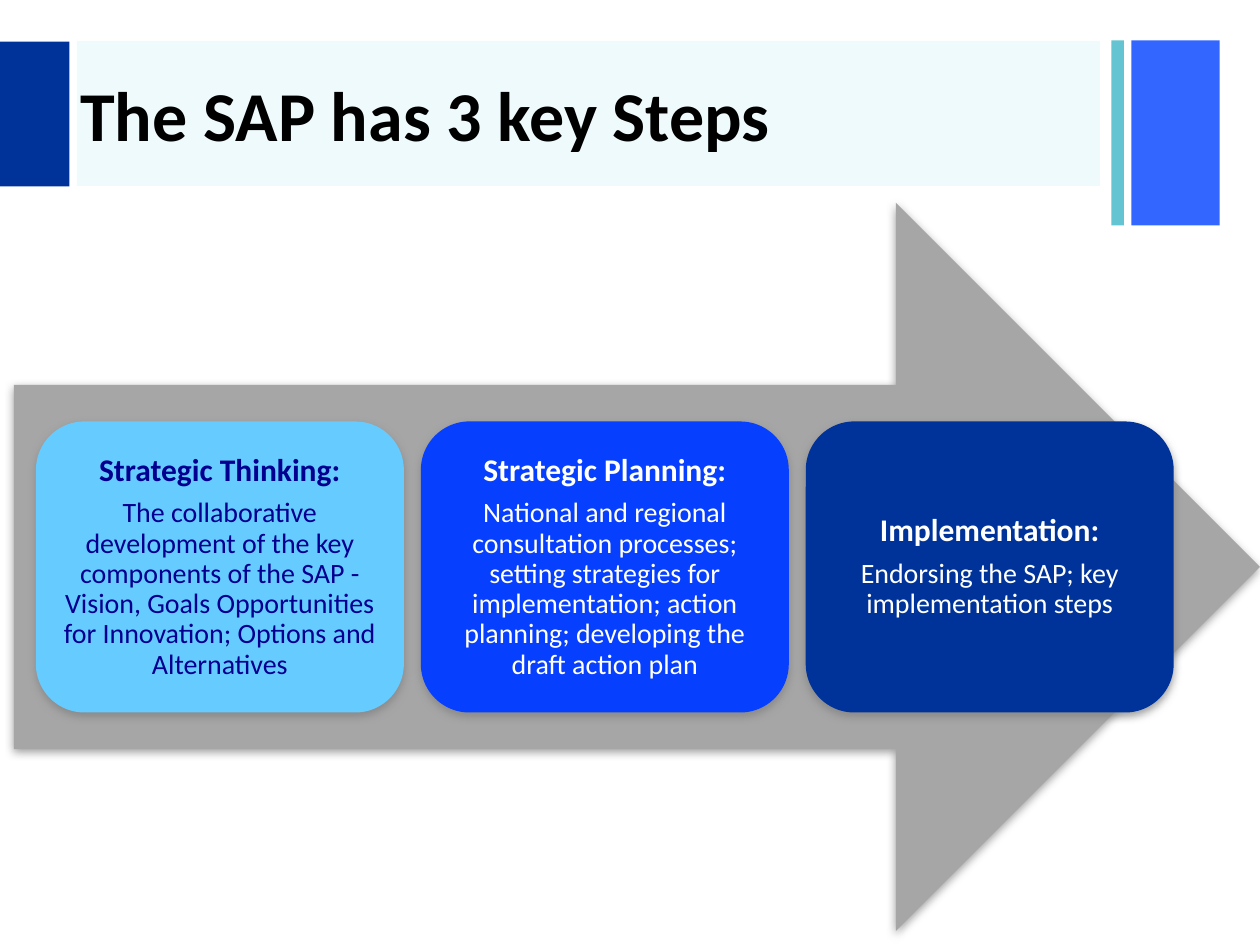
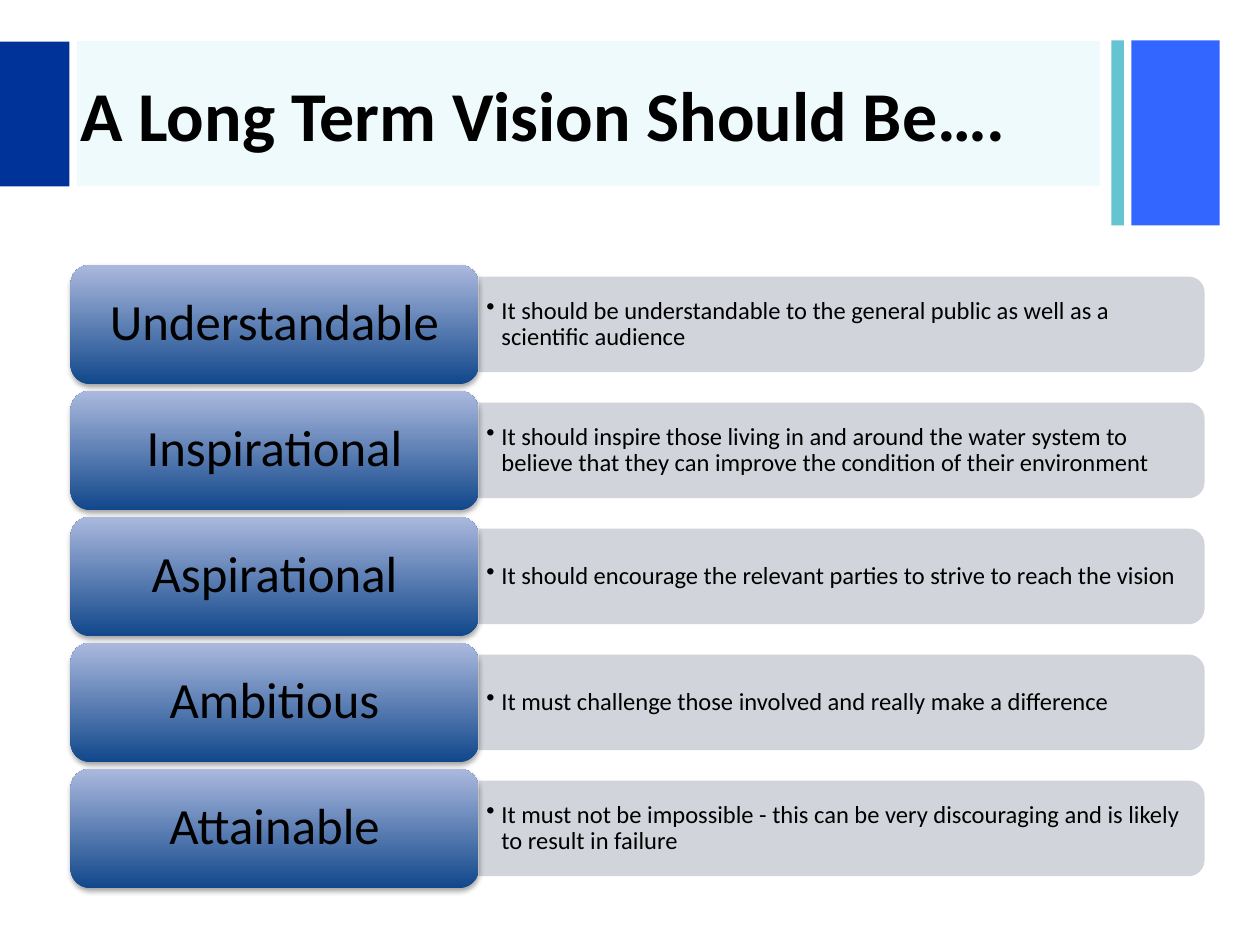
from dataclasses import dataclass
from typing import Optional

from lxml import etree
from pptx import Presentation
from pptx import util as u
from pptx.dml.color import RGBColor
from pptx.enum import shapes, text
from pptx.oxml.ns import qn
from pptx.shapes.autoshape import Shape
from pptx.slide import Slide
from pptx.text.text import TextFrame

WIDTH, HEIGHT = u.Inches(10), u.Inches(7.5)
COL, ROW = WIDTH / 100, HEIGHT / 75
FONT = "Calibri"
KIND = shapes.MSO_SHAPE
CENTER, LEFT = text.PP_ALIGN.CENTER, text.PP_ALIGN.LEFT

COLORS = {
    "black": "000000",
    "white": "FFFFFF",
    "ink": "000090",
    "navy": "003399",
    "royal": "3366FF",
    "teal": "65C4D2",
    "pale": "14C5D0",
    "arrow": "A6A6A6",
    "sky": "66CCFF",
    "vivid": "073FFF",
    "detail": "CDD0D7",
    "label_bottom": "11478B",
    "label_top": "ABB9DE",
    "shade": "808080",
}


@dataclass(frozen=True)
class Box:
    """A place on the grid of 100 columns and 75 rows."""
    col: float
    row: float
    cols: float
    rows: float

    def emu(self) -> tuple[int, ...]:
        return (round(self.col * COL), round(self.row * ROW),
                round(self.cols * COL), round(self.rows * ROW))


@dataclass(frozen=True)
class Band:
    box: Box
    color: str
    alpha: int = 100


@dataclass(frozen=True)
class Shadow:
    color: str
    alpha: int
    blur: float
    distance: float


@dataclass(frozen=True)
class Step:
    heading: str
    body: str
    fill: str
    ink: str


@dataclass(frozen=True)
class Quality:
    label: str
    detail: str


BANDS = [
    Band(Box(89.8, 3.2, 7, 14.7), "royal"),
    Band(Box(88.2, 3.2, 1, 14.7), "teal"),
    Band(Box(6.1, 3.25, 81.2, 11.5), "pale", 7),
    Band(Box(0, 3.3, 5.5, 11.5), "navy"),
]
TITLE = Box(5.4, 3.4, 82.7, 11.2)

ARROW = Box(1.1, 16.1, 98.9, 57.8)
STEP = Box(2.85, 33.45, 29.2, 23.1)
STEP_PITCH = 30.55
STEP_SHADOW = Shadow("shade", 75, 5, 2)
STEPS = [
    Step("Strategic Thinking:",
         "The collaborative development of the key components of the SAP - "
         "Vision, Goals Opportunities for Innovation; Options and Alternatives",
         "sky", "ink"),
    Step("Strategic Planning:",
         "National and regional consultation processes; setting strategies for "
         "implementation; action planning; developing the draft action plan",
         "vivid", "white"),
    Step("Implementation:", "Endorsing the SAP; key implementation steps",
         "navy", "white"),
]

LABEL = Box(5.6, 21, 32.4, 9.5)
DETAIL = Box(38, 21.95, 57.6, 7.6)
QUALITY_PITCH = 10
LABEL_SHADOW = Shadow("black", 35, 3.1, 1.8)
QUALITIES = [
    Quality("Understandable",
            "It should be understandable to the general public as well as a "
            "scientific audience"),
    Quality("Inspirational",
            "It should inspire those living in and around the water system to "
            "believe that they can improve the condition of their environment"),
    Quality("Aspirational",
            "It should encourage the relevant parties to strive to reach the vision"),
    Quality("Ambitious",
            "It must challenge those involved and really make a difference"),
    Quality("Attainable",
            "It must not be impossible - this can be very discouraging and is "
            "likely to result in failure"),
]


def rgb(name: str) -> RGBColor:
    return RGBColor.from_string(COLORS[name])


def set_alpha(element: etree._Element, percent: int) -> None:
    """Make every plain colour inside the element translucent."""
    for color in element.iter(qn("a:srgbClr")):
        etree.SubElement(color, qn("a:alpha"), val=str(percent * 1000))


def draw(slide: Slide, kind: shapes.MSO_SHAPE, box: Box, color: str,
         alpha: int = 100) -> Shape:
    shape = slide.shapes.add_shape(kind, *box.emu())
    shape.fill.solid()
    shape.fill.fore_color.rgb = rgb(color)
    shape.line.fill.background()
    shape.shadow.inherit = False
    if alpha < 100:
        set_alpha(shape.fill._xPr, alpha)
    return shape


def cast_shadow(shape: Shape, shadow: Shadow) -> None:
    effects = shape._element.spPr.find(qn("a:effectLst"))
    outer = etree.SubElement(
        effects, qn("a:outerShdw"), blurRad=str(u.Pt(shadow.blur)),
        dist=str(u.Pt(shadow.distance)), dir="5400000", rotWithShape="0")
    etree.SubElement(outer, qn("a:srgbClr"), val=COLORS[shadow.color])
    set_alpha(outer, shadow.alpha)


def write(frame: TextFrame, lines: list[str], sizes: list[int], color: str,
          align: text.PP_ALIGN = CENTER, bold_first: bool = False,
          spacing: float = 0.9, insets: tuple[float, float] = (0.1, 0.05)) -> None:
    """Fill a frame with one paragraph per line, centred vertically."""
    frame.word_wrap = True
    frame.vertical_anchor = text.MSO_ANCHOR.MIDDLE
    frame.margin_left = frame.margin_right = u.Inches(insets[0])
    frame.margin_top = frame.margin_bottom = u.Inches(insets[1])
    frame.text = "\n".join(lines)
    for index, (paragraph, size) in enumerate(zip(frame.paragraphs, sizes)):
        paragraph.alignment = align
        paragraph.line_spacing = spacing
        if index < len(lines) - 1:
            paragraph.space_after = u.Pt(0.35 * size)
        font = paragraph.runs[0].font
        font.name, font.size = FONT, u.Pt(size)
        font.bold = bold_first and index == 0
        font.color.rgb = rgb(color)


def add_bullet(frame: TextFrame) -> None:
    indent = u.Inches(0.12)
    for paragraph in frame.paragraphs:
        paragraph.level = 1
        properties = paragraph._p.get_or_add_pPr()
        properties.set("marL", str(indent))
        properties.set("indent", str(-indent))
        etree.SubElement(properties, qn("a:buChar"), char="•")


def titled_slide(deck: Presentation, title: str) -> Slide:
    slide = deck.slides.add_slide(deck.slide_layouts[6])
    for band in BANDS:
        draw(slide, KIND.RECTANGLE, band.box, band.color, band.alpha)
    heading = slide.shapes.add_textbox(*TITLE.emu())
    write(heading.text_frame, [title], [40], "black", LEFT,
          bold_first=True, spacing=1.0)
    return slide


def draw_step(slide: Slide, position: int, step: Step) -> None:
    box = Box(STEP.col + position * STEP_PITCH, STEP.row, STEP.cols, STEP.rows)
    card = draw(slide, KIND.ROUNDED_RECTANGLE, box, step.fill)
    cast_shadow(card, STEP_SHADOW)
    write(card.text_frame, [step.heading, step.body], [18, 16], step.ink,
          bold_first=True, insets=(0.07, 0.07))


def draw_detail(slide: Slide, box: Box, detail: str) -> None:
    """Draw a bar rounded on its right: an upright shape turned by 90 degrees."""
    upright = Box(box.col + (box.cols - box.rows) / 2,
                  box.row + (box.rows - box.cols) / 2, box.rows, box.cols)
    bar = draw(slide, KIND.ROUND_2_SAME_RECTANGLE, upright, "detail", 90)
    bar.rotation = 90
    note = slide.shapes.add_textbox(
        *Box(box.col, box.row + 0.35, box.cols - 0.4, box.rows - 0.7).emu())
    write(note.text_frame, [detail], [14], "black", LEFT, insets=(0.06, 0.03))
    add_bullet(note.text_frame)


def draw_label(slide: Slide, box: Box, label: str) -> None:
    plate = draw(slide, KIND.ROUNDED_RECTANGLE, box, "label_bottom")
    plate.fill.gradient()
    plate.fill.gradient_angle = 90
    for position, (stop, color) in enumerate(
            zip(plate.fill.gradient_stops, ("label_bottom", "label_top"))):
        stop.position = position
        stop.color.rgb = rgb(color)
    cast_shadow(plate, LABEL_SHADOW)
    write(plate.text_frame, [label], [29], "black", insets=(0.12, 0.06))


def draw_quality(slide: Slide, position: int, quality: Quality) -> None:
    drop = position * QUALITY_PITCH
    draw_detail(slide, Box(DETAIL.col, DETAIL.row + drop, DETAIL.cols, DETAIL.rows),
                quality.detail)
    draw_label(slide, Box(LABEL.col, LABEL.row + drop, LABEL.cols, LABEL.rows),
               quality.label)


def main() -> None:
    deck = Presentation()
    deck.slide_width, deck.slide_height = WIDTH, HEIGHT

    key_steps = titled_slide(deck, "The SAP has 3 key Steps")
    cast_shadow(draw(key_steps, KIND.RIGHT_ARROW, ARROW, "arrow"), STEP_SHADOW)
    for position, step in enumerate(STEPS):
        draw_step(key_steps, position, step)

    vision = titled_slide(deck, "A Long Term Vision Should Be….")
    for position, quality in enumerate(QUALITIES):
        draw_quality(vision, position, quality)

    deck.save("out.pptx")


if __name__ == "__main__":
    main()
